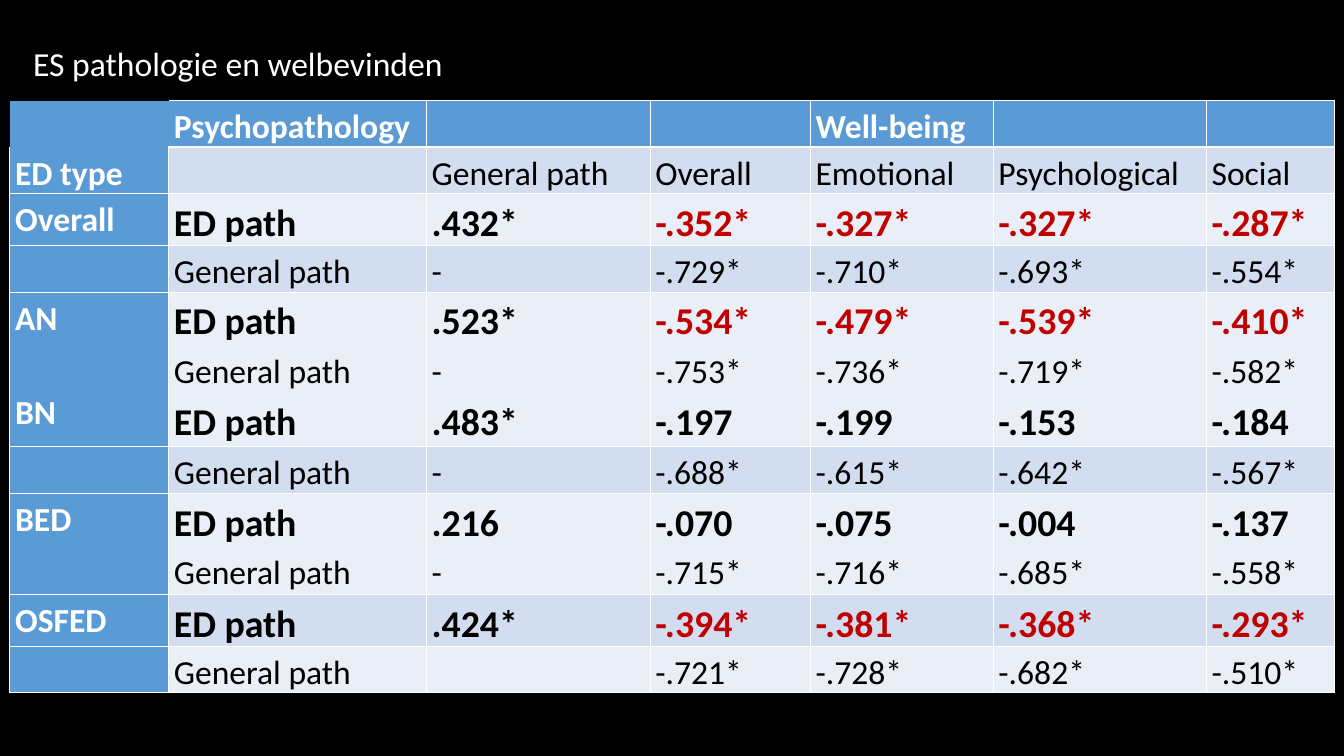
from dataclasses import dataclass

import pptx
import pptx.dml.color
import pptx.oxml
import pptx.oxml.ns
import pptx.util

Pt = pptx.util.Pt
RGB = pptx.dml.color.RGBColor.from_string


@dataclass(frozen=True)
class Theme:
    font: str = "Calibri"
    background: str = "000000"
    white: str = "FFFFFF"
    black: str = "000000"
    red: str = "C00000"
    header: str = "5B9BD5"
    bands: tuple[str, str] = ("EAEFF7", "D2DEEF")
    size: float = 32
    emphasis_size: float = 36
    line_spacing: float = 1.15
    label_line: float = 45


@dataclass(frozen=True)
class Label:
    """A disorder name and the number of the line it stands on."""
    text: str
    line: int = 0


@dataclass(frozen=True)
class Band:
    """A table row, holding one or more lines of six values."""
    height: float
    labels: tuple[Label, ...]
    lines: tuple[tuple[str, ...], ...]


THEME = Theme()
ED, GENERAL = "ED path", "General path"
FIRST_WELLBEING = 3
COLUMN_WIDTHS = (151.2, 245.5, 213.1, 152.6, 174.2, 203, 122.4)
BANDS = (
    Band(44, (), (("Psychopathology", "", "", "Well-being", "", ""),)),
    Band(44, (Label("ED type"),),
         (("", GENERAL, "Overall", "Emotional", "Psychological", "Social"),)),
    Band(49, (Label("Overall"),),
         ((ED, ".432*", "-.352*", "-.327*", "-.327*", "-.287*"),)),
    Band(44, (), ((GENERAL, "-", "-.729*", "-.710*", "-.693*", "-.554*"),)),
    Band(147.5, (Label("AN"), Label("BN", 2)),
         ((ED, ".523*", "-.534*", "-.479*", "-.539*", "-.410*"),
          (GENERAL, "-", "-.753*", "-.736*", "-.719*", "-.582*"),
          (ED, ".483*", "-.197", "-.199", "-.153", "-.184"))),
    Band(44, (), ((GENERAL, "-", "-.688*", "-.615*", "-.642*", "-.567*"),)),
    Band(96, (Label("BED"),),
         ((ED, ".216", "-.070", "-.075", "-.004", "-.137"),
          (GENERAL, "-", "-.715*", "-.716*", "-.685*", "-.558*"))),
    Band(49, (Label("OSFED"),),
         ((ED, ".424*", "-.394*", "-.381*", "-.368*", "-.293*"),)),
    Band(44, (), ((GENERAL, "", "-.721*", "-.728*", "-.682*", "-.510*"),)),
)


def style_paragraph(p, size: float, color: str, bold: bool = False) -> None:
    p.font.name = THEME.font
    p.font.size = Pt(size)
    p.font.bold = bold
    p.font.color.rgb = RGB(color)


def add_line(tf, index: int, text: str, size: float, color: str, bold: bool):
    p = tf.paragraphs[0] if index == 0 else tf.add_paragraph()
    p.text = text
    p.line_spacing = THEME.line_spacing
    style_paragraph(p, size, color, bold)
    return p


def border_widths(row: int, col: int) -> dict[str, float]:
    """Widths by side; the corner cell is open, and a thick rule ends the header."""
    if (row, col) == (0, 0):
        return dict(L=0, R=0, T=0, B=0)
    top = 1
    if row == 1:
        top = 3 if col else 0
    return dict(L=0 if (row, col) == (0, 1) else 1, R=1,
                T=top, B=3 if row == 0 else 1)


def set_borders(cell, widths: dict[str, float]) -> None:
    tc_pr = cell._tc.get_or_add_tcPr()
    for i, (side, width) in enumerate(widths.items()):
        paint = (f'<a:solidFill><a:srgbClr val="{THEME.white}"/></a:solidFill>'
                 if width else "<a:noFill/>")
        tc_pr.insert(i, pptx.oxml.parse_xml(
            f'<a:ln{side} {pptx.oxml.ns.nsdecls("a")} w="{Pt(width)}">'
            f"{paint}</a:ln{side}>"))


def fill_label_cell(cell, labels: tuple[Label, ...]) -> None:
    next_line = 0
    for i, label in enumerate(labels):
        p = add_line(cell.text_frame, i, label.text, THEME.size, THEME.white, True)
        if i:
            p.space_before = Pt((label.line - next_line) * THEME.label_line)
        next_line = label.line + 1


def fill_value_cell(cell, band: Band, col: int, is_header: bool) -> None:
    """Write one column; significant links of ED path with well-being are red."""
    for i, line in enumerate(band.lines):
        text, is_ed = line[col - 1], line[0] == ED
        if not text:
            continue
        color = THEME.white if is_header else THEME.black
        if is_ed and col >= FIRST_WELLBEING and text.endswith("*"):
            color = THEME.red
        size = THEME.emphasis_size if is_ed else THEME.size
        add_line(cell.text_frame, i, text, size, color, is_ed or is_header)


def add_title(s, text: str) -> None:
    tf = s.shapes.add_textbox(Pt(24.5), Pt(37.5), Pt(720), Pt(58.3)).text_frame
    tf.word_wrap = True
    p = tf.paragraphs[0]
    p.text = text
    style_paragraph(p, THEME.size, THEME.white)


def add_effect_table(s) -> None:
    table = s.shapes.add_table(
        len(BANDS), len(COLUMN_WIDTHS), Pt(9.4), Pt(95.8),
        Pt(sum(COLUMN_WIDTHS)), Pt(sum(b.height for b in BANDS))).table
    table.horz_banding = False
    table.first_row = False
    for column, width in zip(table.columns, COLUMN_WIDTHS):
        column.width = Pt(width)
    for row, band in enumerate(BANDS):
        table.rows[row].height = Pt(band.height)
        for col in range(len(COLUMN_WIDTHS)):
            cell = table.cell(row, col)
            cell.margin_left = cell.margin_right = Pt(5)
            cell.margin_top = cell.margin_bottom = Pt(0)
            is_header = row == 0
            cell.fill.solid()
            cell.fill.fore_color.rgb = RGB(
                THEME.header if is_header or col == 0 else THEME.bands[row % 2])
            set_borders(cell, border_widths(row, col))
            if col == 0:
                fill_label_cell(cell, band.labels)
            else:
                fill_value_cell(cell, band, col, is_header)


def main() -> None:
    prs = pptx.Presentation()
    prs.slide_width, prs.slide_height = Pt(1280), Pt(720)
    s = prs.slides.add_slide(prs.slide_layouts[6])
    s.background.fill.solid()
    s.background.fill.fore_color.rgb = RGB(THEME.background)
    add_title(s, "ES pathologie en welbevinden")
    add_effect_table(s)
    prs.save("out.pptx")


if __name__ == "__main__":
    main()
